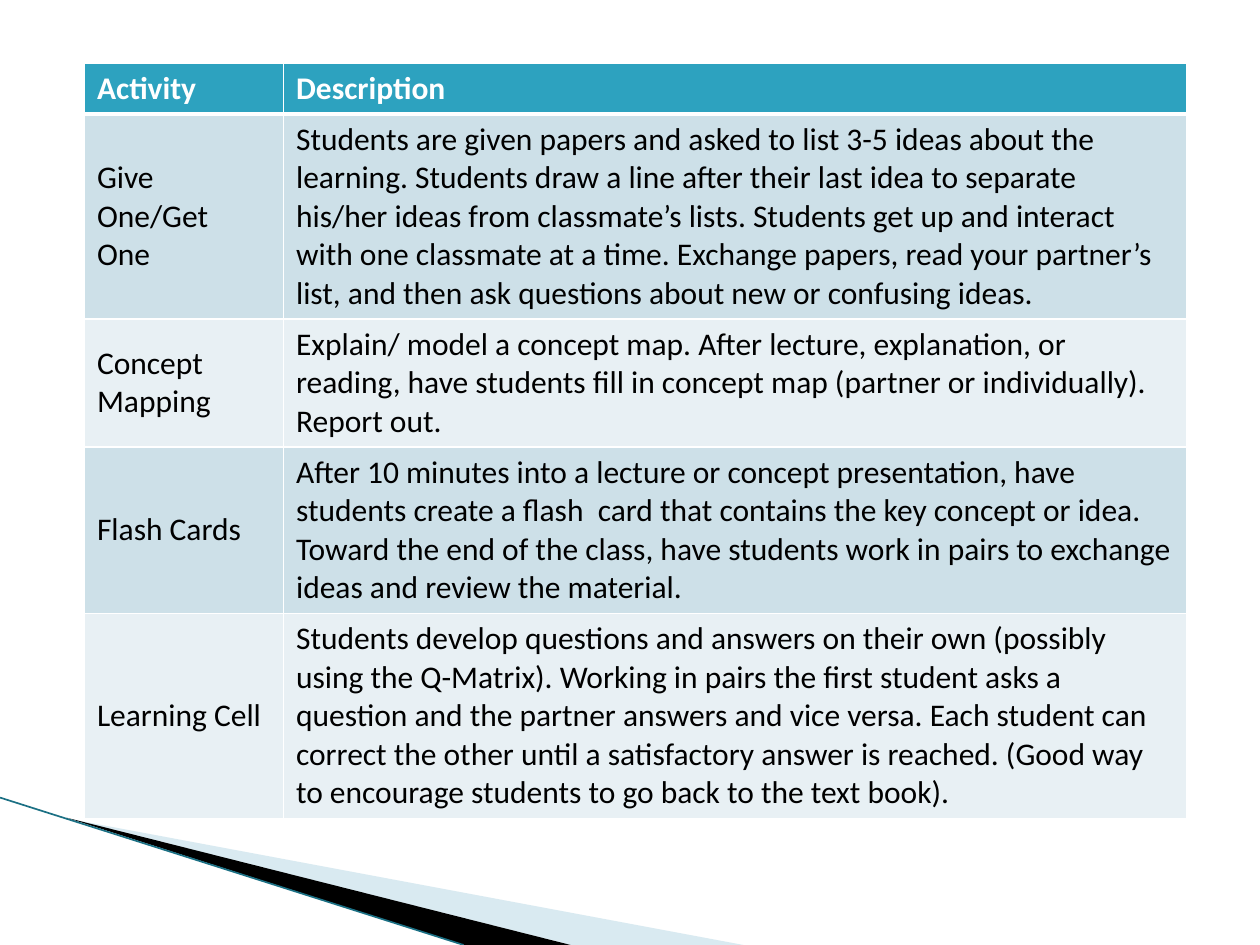
from lxml import etree
from pptx import Presentation
from pptx.dml.color import RGBColor
from pptx.enum.shapes import MSO_CONNECTOR
from pptx.enum.text import MSO_ANCHOR
from pptx.oxml.ns import qn
from pptx.util import Inches, Pt

STRAIGHT = MSO_CONNECTOR.STRAIGHT
MIDDLE = MSO_ANCHOR.MIDDLE

WHITE = RGBColor(0xFF, 0xFF, 0xFF)
BLACK = RGBColor(0, 0, 0)
TEAL = RGBColor(0x2D, 0xA2, 0xBF)
DARK_TEAL = RGBColor(0x1B, 0x70, 0x84)
SWOOSH_BLUE = RGBColor(0xA0, 0xCB, 0xDC)
BAND_DARK = RGBColor(0xCD, 0xE0, 0xE8)
BAND_LIGHT = RGBColor(0xE8, 0xF0, 0xF4)

ACTIVITIES = [
    ("Activity", "Description"),
    ("Give One/Get\nOne",
     "Students are given papers and asked to list 3-5 ideas about the learning. "
     "Students draw a line after their last idea to separate his/her ideas from "
     "classmate’s lists. Students get up and interact with one classmate at a time. "
     "Exchange papers, read your partner’s list, and then ask questions about new "
     "or confusing ideas."),
    ("Concept\nMapping",
     "Explain/ model a concept map. After lecture, explanation, or reading, have "
     "students fill in concept map (partner or individually). Report out."),
    ("Flash Cards",
     "After 10 minutes into a lecture or concept presentation, have students create "
     "a flash  card that contains the key concept or idea. Toward the end of the "
     "class, have students work in pairs to exchange ideas and review the material."),
    ("Learning Cell",
     "Students develop questions and answers on their own (possibly using the "
     "Q-Matrix). Working in pairs the first student asks a question and the partner "
     "answers and vice versa. Each student can correct the other until a satisfactory "
     "answer is reached. (Good way to encourage students to go back to the text book)."),
]
COLUMN_WIDTHS = [1.58, 7.17]
DESCRIPTION_LINES = [1, 5, 3, 4, 5]
LINE_HEIGHT, CELL_PADDING = 0.3, 0.1


def draw_swoosh(slide, points, color):
    corners = [(Inches(x), Inches(y)) for x, y in points]
    builder = slide.shapes.build_freeform(*corners[0], scale=1.0)
    builder.add_line_segments(corners[1:], close=True)
    swoosh = builder.convert_to_shape()
    swoosh.shadow.inherit = False
    swoosh.fill.solid()
    swoosh.fill.fore_color.rgb = color
    swoosh.line.fill.background()
    return swoosh


def set_borders(cell, bottom_width):
    properties = cell._tc.get_or_add_tcPr()
    widths = {"a:lnL": 1, "a:lnR": 1, "a:lnT": 1, "a:lnB": bottom_width}
    for position, (side, width) in enumerate(widths.items()):
        border = etree.Element(qn(side), w=str(Pt(width)))
        fill = etree.SubElement(border, qn("a:solidFill"))
        etree.SubElement(fill, qn("a:srgbClr"), val=str(WHITE))
        properties.insert(position, border)


prs = Presentation()
prs.slide_width, prs.slide_height = Inches(10), Inches(7.5)
slide = prs.slides.add_slide(prs.slide_layouts[6])

pale_swoosh = draw_swoosh(
    slide, [(0.55, 6.5), (5.9, 7.5), (4.53, 7.5)], SWOOSH_BLUE)
pale_color = pale_swoosh.fill._xPr.find(".//" + qn("a:srgbClr"))
etree.SubElement(pale_color, qn("a:alpha"), val="40000")
draw_swoosh(slide, [(0.53, 6.49), (4.53, 7.5), (3.68, 7.5)], BLACK)

edge = slide.shapes.add_connector(
    STRAIGHT, 0, Inches(6.33), Inches(3.68), prs.slide_height)
edge.line.color.rgb = DARK_TEAL
edge.line.width = Pt(0.95)
etree.SubElement(edge._element.spPr, qn("a:effectLst"))

row_heights = [lines * LINE_HEIGHT + CELL_PADDING for lines in DESCRIPTION_LINES]
activity_table = slide.shapes.add_table(
    len(ACTIVITIES), len(COLUMN_WIDTHS), Inches(0.67), Inches(0.5),
    Inches(sum(COLUMN_WIDTHS)), Inches(sum(row_heights))).table
for column, width in zip(activity_table.columns, COLUMN_WIDTHS):
    column.width = Inches(width)

for row_index, texts in enumerate(ACTIVITIES):
    activity_table.rows[row_index].height = Inches(row_heights[row_index])
    is_header = row_index == 0
    band = TEAL if is_header else BAND_DARK if row_index % 2 else BAND_LIGHT
    for column_index, text in enumerate(texts):
        cell = activity_table.cell(row_index, column_index)
        cell.text = text
        cell.vertical_anchor = MIDDLE
        cell.fill.solid()
        cell.fill.fore_color.rgb = band
        set_borders(cell, 3 if is_header else 1)
        for paragraph in cell.text_frame.paragraphs:
            paragraph.font.name = "Calibri"
            paragraph.font.size = Pt(18)
            paragraph.font.bold = is_header
            paragraph.font.color.rgb = WHITE if is_header else BLACK

prs.save("out.pptx")
